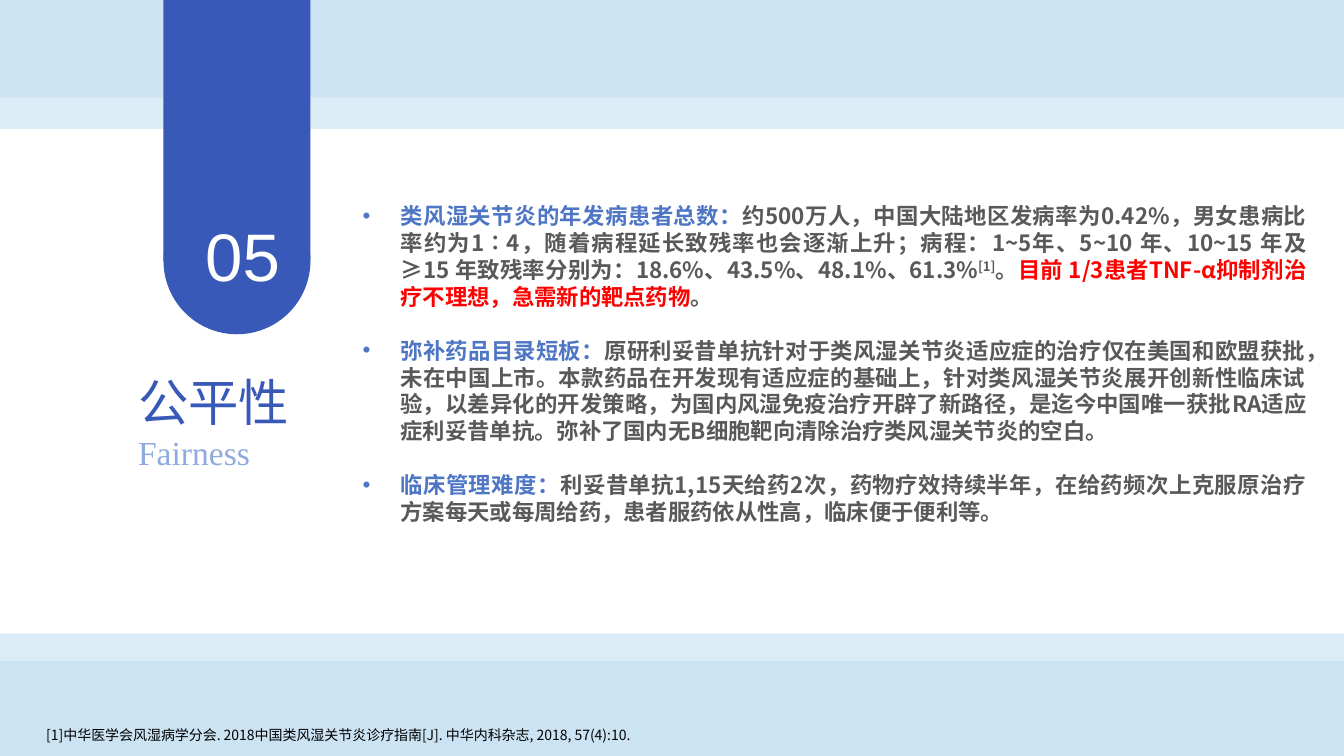
from lxml import etree
from pptx import Presentation
from pptx import util as u
from pptx.dml.color import RGBColor
from pptx.enum import shapes, text
from pptx.oxml import ns

SKY = RGBColor(0xCC, 0xE3, 0xF3)
PALE = RGBColor(0xDC, 0xEC, 0xF7)
WHITE = RGBColor(0xFF, 0xFF, 0xFF)
NAVY = RGBColor(0x38, 0x59, 0xB8)
BLUE = RGBColor(0x4E, 0x76, 0xC5)
LIGHT_BLUE = RGBColor(0x8F, 0xAA, 0xDC)
GREY = RGBColor(0x59, 0x59, 0x59)
RED = RGBColor(0xFF, 0x00, 0x00)
BLACK = RGBColor(0, 0, 0)
CJK = "Noto Sans CJK SC"


def add_run(p, words, size, color, font=CJK, bold=False):
    r = p.add_run()
    r.text = words
    r.font.size = u.Pt(size)
    r.font.bold = bold
    r.font.color.rgb = color
    r.font.name = font
    ea = etree.SubElement(r._r.get_or_add_rPr(), ns.qn("a:ea"))
    ea.set("typeface", font)
    return r


def add_box(s, left, top, width, height):
    tf = s.shapes.add_textbox(u.Pt(left), u.Pt(top), u.Pt(width), u.Pt(height)).text_frame
    tf.word_wrap = True
    return tf


prs = Presentation()
prs.slide_width, prs.slide_height = u.Pt(960), u.Pt(540)
s = prs.slides.add_slide(prs.slide_layouts[5])
s.background.fill.solid()
s.background.fill.fore_color.rgb = SKY

# Bands across the slide, then the hanging tab with its round end
RECT, OVAL = shapes.MSO_SHAPE.RECTANGLE, shapes.MSO_SHAPE.OVAL
for kind, left, top, width, height, color in [
    (RECT, 0, 69.5, 960, 402.8, PALE),
    (RECT, 0, 92, 960, 360.5, WHITE),
    (OVAL, 116.8, 133.8, 105, 105, NAVY),
    (RECT, 116.8, 0, 105, 186.3, NAVY),
]:
    sp = s.shapes.add_shape(kind, u.Pt(left), u.Pt(top), u.Pt(width), u.Pt(height))
    sp.shadow.inherit = False
    sp.fill.solid()
    sp.fill.fore_color.rgb = color
    sp.line.fill.background()

tf = add_box(s, 139.5, 149.8, 96.5, 65.5)
add_run(tf.paragraphs[0], "05", 48, WHITE, "Arial")

# Title, brought in front of the bands
title = s.shapes.title
s.shapes.element.append(title.element)
title.left, title.top, title.width, title.height = map(u.Pt, (91.4, 261.4, 161.3, 80))
tf = title.text_frame
tf.word_wrap = True
tf.auto_size = text.MSO_AUTO_SIZE.NONE
tf.vertical_anchor = text.MSO_ANCHOR.TOP
p = tf.paragraphs[0]
p.alignment = text.PP_ALIGN.JUSTIFY
p.line_spacing = u.Pt(43.2)
add_run(p, "公平性", 36, NAVY)
p = tf.add_paragraph()
p.alignment = text.PP_ALIGN.LEFT
p.space_before = u.Pt(0)
add_run(p, "Fairness", 24, LIGHT_BLUE, "Times New Roman")

points = [
    [
        ("类风湿关节炎的年发病患者总数：", BLUE),
        ("约500万人，中国大陆地区发病率为0.42%，男女患病比率约为1∶4，随着病程延长致残率也会逐渐上升；"
         "病程：1~5年、5~10 年、10~15 年及≥15 年致残率分别为：18.6%、43.5%、48.1%、61.3%", GREY),
        ("[1]", GREY),
        ("。", GREY),
        ("目前 1/3患者TNF-α抑制剂治疗不理想，急需新的靶点药物", RED),
        ("。", GREY),
    ],
    [
        ("弥补药品目录短板：", BLUE),
        ("原研利妥昔单抗针对于类风湿关节炎适应症的治疗仅在美国和欧盟获批，未在中国上市。"
         "本款药品在开发现有适应症的基础上，针对类风湿关节炎展开创新性临床试验，以差异化的开发策略，"
         "为国内风湿免疫治疗开辟了新路径，是迄今中国唯一获批RA适应症利妥昔单抗。"
         "弥补了国内无B细胞靶向清除治疗类风湿关节炎的空白。", GREY),
    ],
    [
        ("临床管理难度：", BLUE),
        ("利妥昔单抗1,15天给药2次，药物疗效持续半年，在给药频次上克服原治疗方案每天或每周给药，"
         "患者服药依从性高，临床便于便利等。", GREY),
    ],
]
tf = add_box(s, 252, 141.1, 688.3, 239.8)
for i, runs in enumerate(points):
    p = tf.paragraphs[0] if i == 0 else tf.add_paragraph()
    pPr = p._p.get_or_add_pPr()
    pPr.set("marL", str(u.Pt(27)))
    pPr.set("indent", str(u.Pt(-27)))
    etree.SubElement(pPr, ns.qn("a:buFont")).set("typeface", "Arial")
    etree.SubElement(pPr, ns.qn("a:buChar")).set("char", "•")
    p.alignment = text.PP_ALIGN.JUSTIFY
    p.line_spacing = u.Pt(19.2)
    p.space_before = u.Pt(19.2 if i else 0)
    for words, color in runs:
        r = add_run(p, words, 16, color, bold=True)
        if words == "[1]":
            r._r.get_or_add_rPr().set("baseline", "30000")

tf = add_box(s, 25.9, 515.5, 481, 19.4)
p = tf.paragraphs[0]
p.line_spacing = u.Pt(12)
add_run(p, "[1]中华医学会风湿病学分会. 2018中国类风湿关节炎诊疗指南[J]. 中华内科杂志, 2018, 57(4):10.", 10, BLACK)

prs.save("out.pptx")
